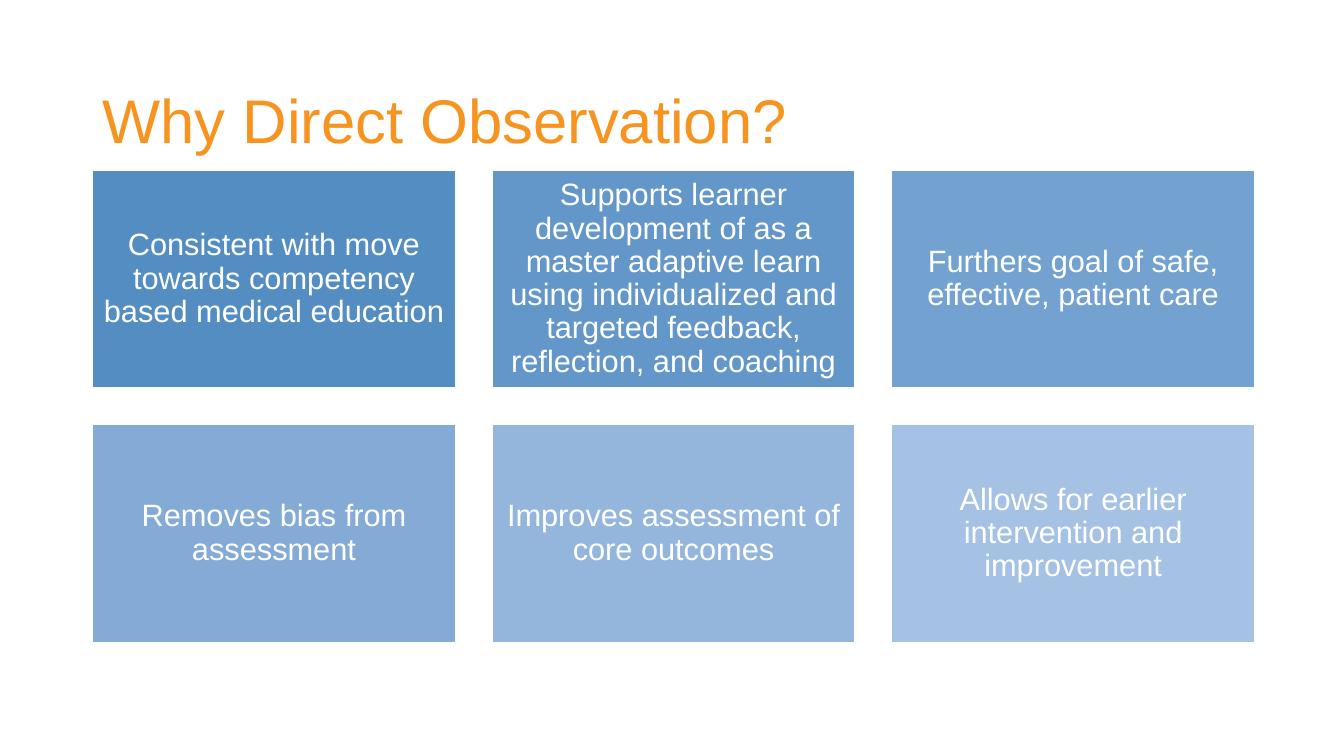
"""Build the slide on the reasons for direct observation."""
from dataclasses import dataclass

from pptx import Presentation
from pptx.dml.color import RGBColor
from pptx.enum.shapes import MSO_SHAPE
from pptx.enum.text import MSO_ANCHOR as ANCHOR, MSO_AUTO_SIZE, PP_ALIGN as ALIGN
from pptx.shapes.autoshape import Shape
from pptx.slide import Slide
from pptx.util import Cm, Pt

ORANGE = RGBColor(0xF6, 0x94, 0x1F)
WHITE = RGBColor(0xFF, 0xFF, 0xFF)
BLUE_1 = RGBColor(0x53, 0x8D, 0xC1)
BLUE_2 = RGBColor(0x63, 0x97, 0xC9)
BLUE_3 = RGBColor(0x73, 0xA1, 0xD0)
BLUE_4 = RGBColor(0x84, 0xAB, 0xD6)
BLUE_5 = RGBColor(0x94, 0xB6, 0xDD)
BLUE_6 = RGBColor(0xA5, 0xC1, 0xE3)

FONT = "Arial"
COLUMNS = 3
LEFT, TOP = 2.33, 4.29
CARD_W, CARD_H, GAP = 9.15, 5.49, 0.92


@dataclass(frozen=True)
class Reason:
    text: str
    fill: RGBColor


REASONS = [
    Reason("Consistent with move towards competency based medical education", BLUE_1),
    Reason("Supports learner development of as a master adaptive learn using "
           "individualized and targeted feedback, reflection, and coaching", BLUE_2),
    Reason("Furthers goal of safe, effective, patient care", BLUE_3),
    Reason("Removes bias from assessment", BLUE_4),
    Reason("Improves assessment of core outcomes", BLUE_5),
    Reason("Allows for earlier intervention and improvement", BLUE_6),
]


def write(sp: Shape, text: str, *, size: float, color: RGBColor,
          align: ALIGN, inset: float) -> None:
    tf = sp.text_frame
    tf.word_wrap = True
    tf.auto_size = MSO_AUTO_SIZE.NONE
    tf.vertical_anchor = ANCHOR.MIDDLE
    tf.margin_left = tf.margin_right = tf.margin_top = tf.margin_bottom = Cm(inset)
    p = tf.paragraphs[0]
    p.alignment = align
    p.line_spacing = 0.9
    r = p.add_run()
    r.text = text
    r.font.name = FONT
    r.font.size = Pt(size)
    r.font.color.rgb = color


def add_title(s: Slide, text: str) -> None:
    sp = s.shapes.title
    sp.left, sp.top, sp.width, sp.height = Cm(LEFT), Cm(1.27), Cm(29.21), Cm(3.68)
    write(sp, text, size=44, color=ORANGE, align=ALIGN.LEFT, inset=0.25)


def add_card(s: Slide, reason: Reason, index: int) -> None:
    row, col = divmod(index, COLUMNS)
    sp = s.shapes.add_shape(
        MSO_SHAPE.RECTANGLE,
        Cm(LEFT + col * (CARD_W + GAP)), Cm(TOP + row * (CARD_H + GAP)),
        Cm(CARD_W), Cm(CARD_H))
    sp.shadow.inherit = False
    sp.fill.solid()
    sp.fill.fore_color.rgb = reason.fill
    sp.line.color.rgb = WHITE
    sp.line.width = Pt(1)
    write(sp, reason.text, size=22, color=WHITE, align=ALIGN.CENTER, inset=0.23)


def main() -> None:
    prs = Presentation()
    prs.slide_width, prs.slide_height = Cm(33.87), Cm(19.05)
    s = prs.slides.add_slide(prs.slide_layouts.get_by_name("Title Only"))
    add_title(s, "Why Direct Observation?")
    for index, reason in enumerate(REASONS):
        add_card(s, reason, index)
    prs.save("out.pptx")


if __name__ == "__main__":
    main()
